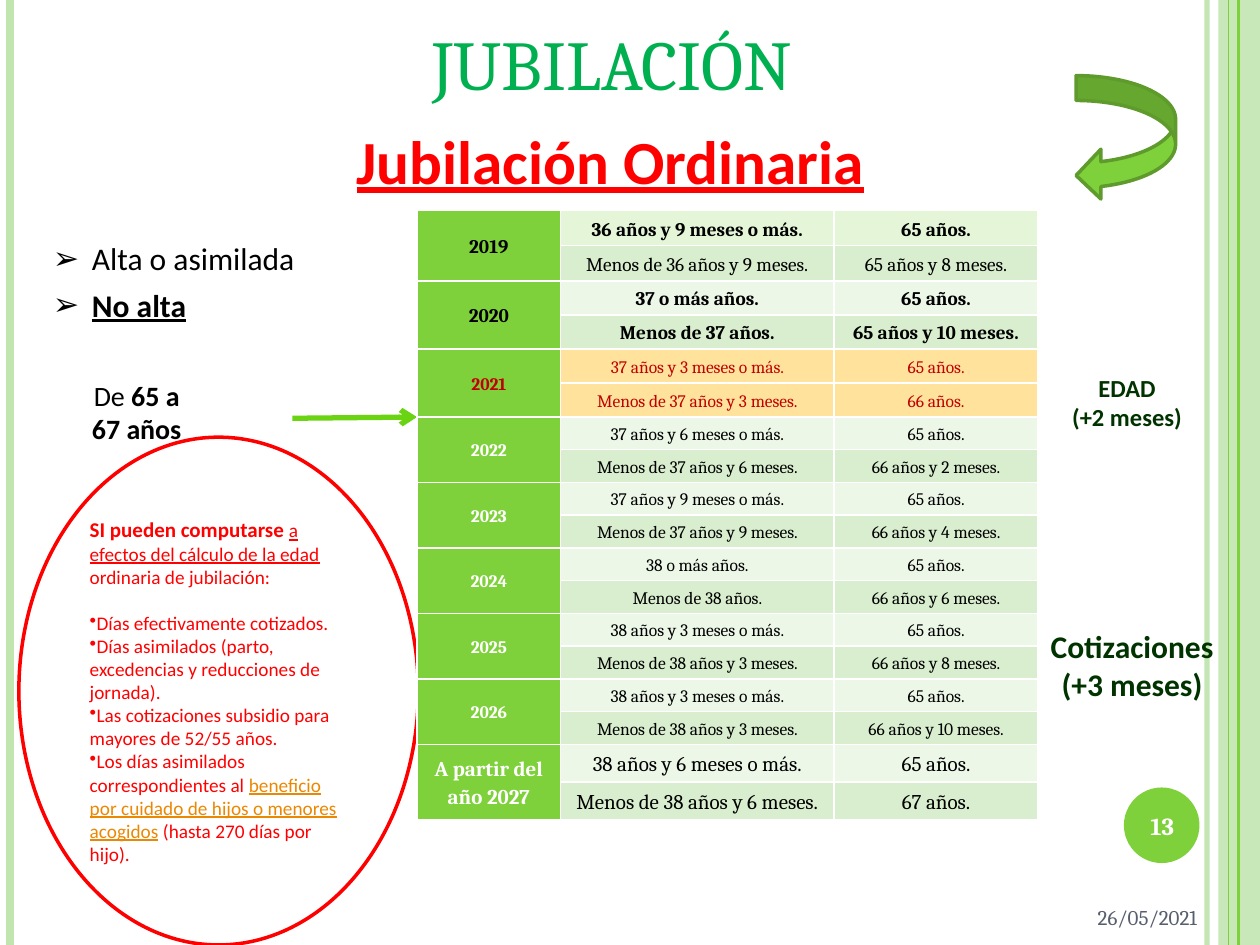
from pptx import Presentation
from pptx.dml.color import RGBColor
from pptx.enum.shapes import MSO_CONNECTOR as CONN, MSO_SHAPE as SHAPE
from pptx.enum.text import MSO_ANCHOR as ANCHOR, MSO_AUTO_SIZE as AUTO, PP_ALIGN as ALIGN
from pptx.oxml.ns import qn
from pptx.util import Inches, Pt
from lxml.etree import SubElement

C = {
    "green": "7FD13B", "pale": "C0E5AF", "dark": "5E9B2C", "arrow": "6AD312",
    "title": "00B050", "red": "FF0000", "crimson": "C00000", "link": "EB8803",
    "forest": "003300", "slate": "575F6D", "black": "000000", "white": "FFFFFF",
    "first": "E5F6D8", "light": "ECF7E8", "mid": "D8EECE", "amber": "FFE39D",
}
BOLD, UNDER = {"bold": True}, {"underline": True}

TITLE = [[("jubilación", {})]]
LIST = [[("Alta o asimilada", {})], [("No alta", BOLD | UNDER)]]
RULES = [
    (9.58, "pale", 3, 93),
    (0.08, "pale", 4.5, 100),
    (9.83, "green", 1.5, 100),
    (9.75, "green", 0.75, 100),
]
LABELS = [
    ((7.4, 7.07, 2.2, 0.42), [[("26/05/2021", {})]], "Cambria", 12, "slate", ALIGN.RIGHT, ANCHOR.MIDDLE),
    ((8.89, 6.27, 0.67, 0.57), [[("13", BOLD)]], "Cambria", 14, "white", ALIGN.CENTER, ANCHOR.MIDDLE),
    ((0.12, 0.84, 9.45, 0.6), [[("Jubilación Ordinaria", BOLD | UNDER)]],
     "Calibri", 35, "red", ALIGN.CENTER, ANCHOR.TOP),
    ((8.39, 2.91, 1.11, 0.55), [[("EDAD", BOLD)], [("(+2 meses)", BOLD)]],
     "Calibri", 14, "forest", ALIGN.CENTER, ANCHOR.TOP),
    ((0.41, 2.95, 1.35, 0.64), [[("De ", {}), ("65 a", BOLD)], [("67 años", BOLD)]],
     "Calibri", 16, "black", ALIGN.CENTER, ANCHOR.MIDDLE),
    ((8.23, 4.93, 1.51, 0.71), [[("Cotizaciones (+3 meses)", BOLD)]],
     "Calibri", 18, "forest", ALIGN.CENTER, ANCHOR.TOP),
]
COUNTED = [
    [("SI pueden computarse ", BOLD | {"size": 12}), ("a efectos del cálculo de la edad ", UNDER),
     ("ordinaria de jubilación:", {})],
    [("Días efectivamente cotizados.", {})],
    [("Días asimilados (parto, excedencias y reducciones de jornada).", {})],
    [("Las cotizaciones subsidio para mayores de 52/55 años.", {})],
    [("Los días asimilados correspondientes al ", {}),
     ("beneficio por cuidado de hijos o menores acogidos", UNDER | {"color": "link"}),
     (" (hasta 270 días por hijo).", {})],
]
YEARS = [
    ("2019", "36 años y 9 meses o más.", "Menos de 36 años y 9 meses.", "65 años y 8 meses."),
    ("2020", "37 o más años.", "Menos de 37 años.", "65 años y 10 meses."),
    ("2021", "37 años y 3 meses o más.", "Menos de 37 años y 3 meses.", "66 años."),
    ("2022", "37 años y 6 meses o más.", "Menos de 37 años y 6 meses.", "66 años y 2 meses."),
    ("2023", "37 años y 9 meses o más.", "Menos de 37 años y 9 meses.", "66 años y 4 meses."),
    ("2024", "38 o más años.", "Menos de 38 años.", "66 años y 6 meses."),
    ("2025", "38 años y 3 meses o más.", "Menos de 38 años y 3 meses.", "66 años y 8 meses."),
    ("2026", "38 años y 3 meses o más.", "Menos de 38 años y 3 meses.", "66 años y 10 meses."),
    ("A partir del año 2027", "38 años y 6 meses o más.", "Menos de 38 años y 6 meses.", "67 años."),
]
BASE_AGE = "65 años."
COLS = [1.14, 2.17, 1.62]
STYLES = {
    "2019": {"size": 11, "year": "black", "fills": ("first", "mid"), "bold": (True, False), "height": 0.28},
    "2020": {"size": 11, "year": "black", "bold": (True, True), "height": 0.27},
    "2021": {"year": "crimson", "text": "crimson", "fills": ("amber", "amber"), "height": 0.27},
    "A partir del año 2027": {"size": 12, "height": 0.3},
}
DEFAULT = {"size": 10, "year": "white", "text": "black", "fills": ("light", "mid"),
           "bold": (False, False), "height": 0.26}


def rgb(name):
    return RGBColor.from_string(C[name])


def box(*lengths):
    return [Inches(v) for v in lengths]


def fade(fill, percent):
    color = fill._xPr.find(qn("a:solidFill"))[0]
    SubElement(color, qn("a:alpha"), val=str(percent * 1000))


def write(tf, paragraphs, font, size, color, align, anchor=ANCHOR.MIDDLE, spacing=None):
    tf.word_wrap = True
    tf.auto_size = AUTO.NONE
    tf.vertical_anchor = anchor
    for i, runs in enumerate(paragraphs):
        p = tf.paragraphs[0] if i == 0 else tf.add_paragraph()
        p.alignment = align
        p.line_spacing = spacing
        p.space_before = Pt(0)
        for text, look in runs:
            r = p.add_run()
            r.text = text
            r.font.name = font
            r.font.size = Pt(look.get("size", size))
            r.font.color.rgb = rgb(look.get("color", color))
            r.font.bold = look.get("bold", False)
            r.font.underline = look.get("underline", False)


def bullet(p, char, indent=0):
    pPr = p._p.get_or_add_pPr()
    pPr.set("marL", str(Inches(indent)))
    pPr.set("indent", str(-Inches(indent)))
    SubElement(pPr, qn("a:buChar"), char=char)


def line(s, start, end, color, width):
    c = s.shapes.add_connector(CONN.STRAIGHT, *box(*start, *end))
    c.line.color.rgb = rgb(color)
    c.line.width = Pt(width)
    SubElement(c._element.spPr, qn("a:effectLst"))
    return c


def shape(s, kind, at, fill=None, outline=None, width=2):
    sp = s.shapes.add_shape(kind, *box(*at))
    sp.shadow.inherit = False
    if fill:
        sp.fill.solid()
        sp.fill.fore_color.rgb = rgb(fill)
    else:
        sp.fill.background()
    if outline:
        sp.line.color.rgb = rgb(outline)
        sp.line.width = Pt(width)
    else:
        sp.line.fill.background()
    return sp


def fill_cell(cell, text, size, color, bold, fill):
    cell.fill.solid()
    cell.fill.fore_color.rgb = rgb(fill)
    cell.margin_left = cell.margin_right = Inches(0.07)
    cell.margin_top = cell.margin_bottom = Inches(0.03)
    cell.vertical_anchor = ANCHOR.MIDDLE
    write(cell.text_frame, [[(text, {"bold": bold})]], "Cambria", size, color, ALIGN.CENTER, spacing=1.15)


def add_years(s):
    table = s.shapes.add_table(2 * len(YEARS), len(COLS), *box(3.31, 1.67, sum(COLS), 4.83)).table
    table.horz_banding = False
    for col, width in zip(table.columns, COLS):
        col.width = Inches(width)
    for i, (year, long, short, age) in enumerate(YEARS):
        look = DEFAULT | STYLES.get(year, {})
        top = 2 * i
        table.cell(top, 0).merge(table.cell(top + 1, 0))
        fill_cell(table.cell(top, 0), year, look["size"], look["year"], True, "green")
        for j, texts in enumerate([(long, BASE_AGE), (short, age)]):
            table.rows[top + j].height = Inches(look["height"])
            for k, text in enumerate(texts, 1):
                fill_cell(table.cell(top + j, k), text, look["size"], look["text"],
                          look["bold"][j], look["fills"][j])


def main():
    prs = Presentation()
    prs.slide_width, prs.slide_height = box(10, 7.5)
    s = prs.slides.add_slide(prs.slide_layouts[1])

    title, body = s.shapes.title, s.placeholders[1]
    title.left, title.top, title.width, title.height = box(0, -0.35, 9.72, 1.26)
    write(title.text_frame, TITLE, "Cambria", 50, "title", ALIGN.CENTER, ANCHOR.BOTTOM)
    title.text_frame.paragraphs[0].runs[0].font._element.set("cap", "small")

    body.left, body.top, body.width, body.height = box(0.32, 1.85, 2.17, 0.77)
    write(body.text_frame, LIST, "Calibri", 18, "black", ALIGN.LEFT, ANCHOR.TOP)
    for p in body.text_frame.paragraphs:
        p.space_after = Pt(5)
        bullet(p, "➢", 0.31)

    band = shape(s, SHAPE.RECTANGLE, (9.67, 0, 0.33, 7.5), "pale")
    fade(band.fill, 87)
    for x, color, width, alpha in RULES:
        rule = line(s, (x, 0), (x, 7.5), color, width)
        if alpha < 100:
            fade(rule.line.fill, alpha)
    shape(s, SHAPE.OVAL, (8.92, 6.25, 0.6, 0.6), "green")

    tf = shape(s, SHAPE.OVAL, (0.15, 3.47, 3.17, 4.03), outline="red").text_frame
    write(tf, COUNTED, "Calibri", 11, "red", ALIGN.LEFT)
    tf.paragraphs[0].space_after = Pt(13)
    for p in tf.paragraphs[1:]:
        bullet(p, "•")

    for at, paragraphs, font, size, color, align, anchor in LABELS:
        tf = s.shapes.add_textbox(*box(*at)).text_frame
        write(tf, paragraphs, font, size, color, align, anchor, 1.15 if size == 35 else None)

    pointer = line(s, (2.32, 3.32), (3.31, 3.31), "arrow", 3)
    SubElement(pointer.line._get_or_add_ln(), qn("a:tailEnd"), type="arrow")
    add_years(s)
    shape(s, SHAPE.CURVED_LEFT_ARROW, (8.54, 0.6, 0.79, 0.99), "green", "dark")
    prs.save("out.pptx")


if __name__ == "__main__":
    main()
